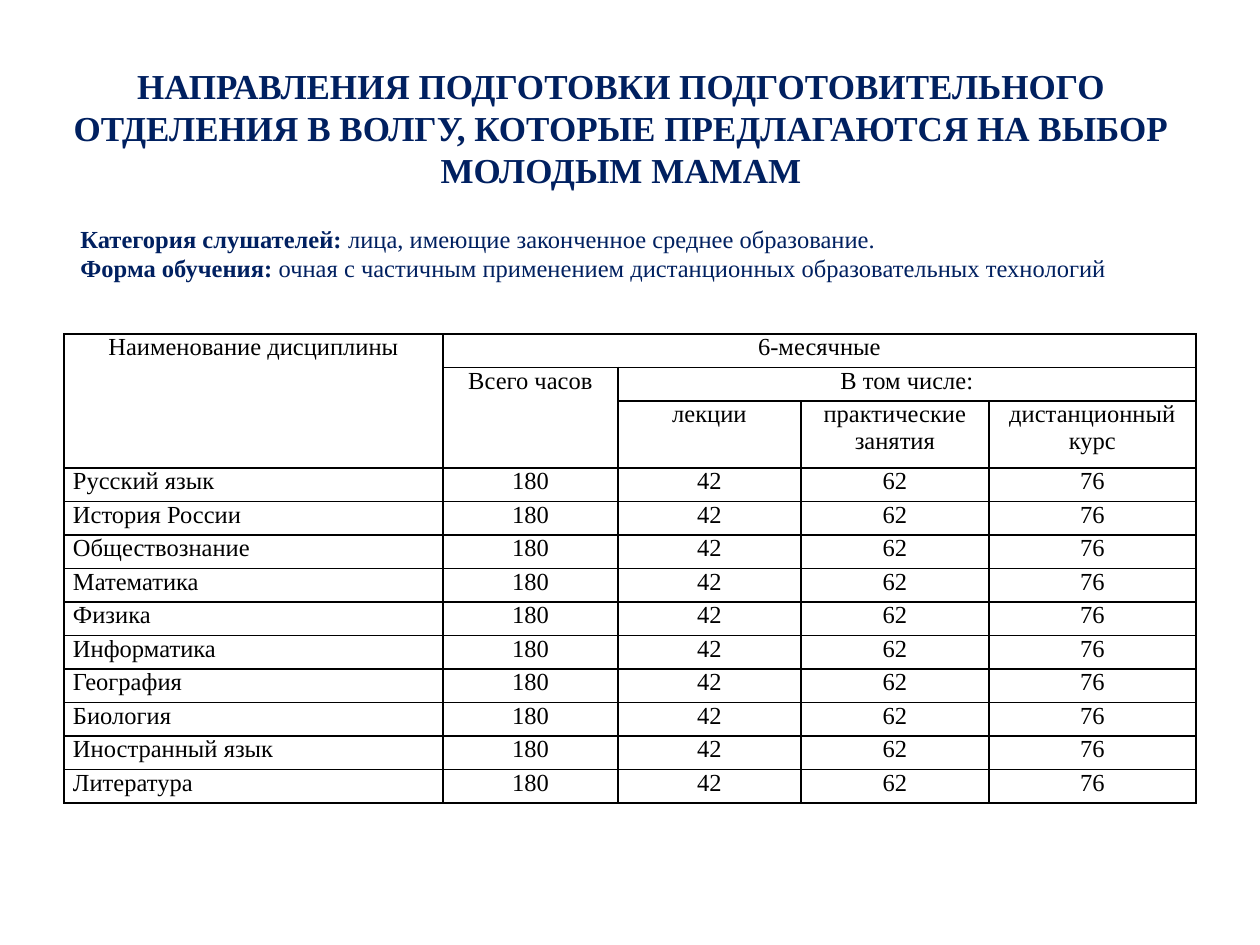
from dataclasses import dataclass
from itertools import accumulate

from lxml.etree import SubElement
from pptx import Presentation
from pptx.dml.color import RGBColor
from pptx.enum.text import MSO_ANCHOR as Anchor, MSO_AUTO_SIZE as AutoSize, PP_ALIGN as Align
from pptx.oxml.ns import qn
from pptx.util import Emu, Pt

EMU_PER_PX = 914400 // 126


def px(length: int) -> Emu:
    return Emu(length * EMU_PER_PX)


@dataclass(frozen=True)
class Theme:
    font: str = "Times New Roman"
    navy: str = "002060"
    black: str = "000000"
    title_size: int = 20
    title_leading: int = 24
    text_size: int = 14
    text_leading: int = 17
    border: int = 1


@dataclass(frozen=True)
class Box:
    left: int
    top: int
    width: int
    height: int


@dataclass(frozen=True)
class Span:
    """A header cell covering one or more rows and columns."""
    row: int
    col: int
    rows: int
    cols: int
    text: str


THEME = Theme()
TITLE_BOX = Box(54, 38, 1134, 179)
TERMS_BOX = Box(68, 217, 1152, 72)
TABLE_BOX = Box(64, 334, 1132, 469)
COLUMN_WIDTHS = (379, 175, 183, 188, 207)

TITLE = ("НАПРАВЛЕНИЯ ПОДГОТОВКИ ПОДГОТОВИТЕЛЬНОГО ОТДЕЛЕНИЯ В ВОЛГУ, "
         "КОТОРЫЕ ПРЕДЛАГАЮТСЯ НА ВЫБОР МОЛОДЫМ МАМАМ")
TERMS = (
    ("Категория слушателей:", " лица, имеющие законченное среднее образование."),
    ("Форма обучения: ",
     "очная с частичным применением дистанционных образовательных технологий"),
)
HEADERS = (
    Span(0, 0, 3, 1, "Наименование дисциплины"),
    Span(0, 1, 1, 4, "6-месячные"),
    Span(1, 1, 2, 1, "Всего часов"),
    Span(1, 2, 1, 3, "В том числе:"),
    Span(2, 2, 1, 1, "лекции"),
    Span(2, 3, 1, 1, "практические\nзанятия"),
    Span(2, 4, 1, 1, "дистанционный курс"),
)
SUBJECTS = ("Русский язык", "История России", "Обществознание", "Математика", "Физика",
            "Информатика", "География", "Биология", "Иностранный язык", "Литература")
HOURS = ("180", "42", "62", "76")
ROW_LINES = (1, 1, 2) + (1,) * len(SUBJECTS)
HEADER_ROWS = len(ROW_LINES) - len(SUBJECTS)


def style(paragraph, size: int, color: str, bold: bool | None = None) -> None:
    font = paragraph.font
    font.name, font.size, font.bold = THEME.font, Pt(size), bold
    font.color.rgb = RGBColor.from_string(color)


def add_text_frame(slide, box: Box):
    frame = slide.shapes.add_textbox(
        px(box.left), px(box.top), px(box.width), px(box.height)).text_frame
    frame.word_wrap = True
    frame.vertical_anchor = Anchor.MIDDLE
    return frame


def add_title(slide) -> None:
    heading = add_text_frame(slide, TITLE_BOX).paragraphs[0]
    heading.text = TITLE
    heading.alignment = Align.CENTER
    heading.line_spacing = Pt(THEME.title_leading)
    style(heading, THEME.title_size, THEME.navy, bold=True)


def add_terms(slide) -> None:
    frame = add_text_frame(slide, TERMS_BOX)
    frame.auto_size = AutoSize.SHAPE_TO_FIT_TEXT
    for index, (label, detail) in enumerate(TERMS):
        term = frame.add_paragraph() if index else frame.paragraphs[0]
        for text, bold in ((label, True), (detail, False)):
            run = term.add_run()
            run.text, run.font.bold = text, bold
        term.line_spacing = Pt(THEME.text_leading)
        style(term, THEME.text_size, THEME.navy)


def clear_cell(cell) -> None:
    """Give a cell plain borders, no fill and narrow margins."""
    cell.margin_left = cell.margin_right = px(9)
    cell.margin_top = cell.margin_bottom = 0
    properties = cell._tc.get_or_add_tcPr()
    for side in ("a:lnL", "a:lnR", "a:lnT", "a:lnB"):
        line = SubElement(properties, qn(side), w=str(Pt(THEME.border)))
        SubElement(SubElement(line, qn("a:solidFill")), qn("a:srgbClr"), val=THEME.black)
    cell.fill.background()


def fill_cell(cell, text: str, align: Align = Align.CENTER) -> None:
    cell.text = text
    for paragraph in cell.text_frame.paragraphs:
        paragraph.alignment = align
        style(paragraph, THEME.text_size, THEME.black, bold=False)


def add_hours_table(slide) -> None:
    box = TABLE_BOX
    table = slide.shapes.add_table(
        len(ROW_LINES), len(COLUMN_WIDTHS),
        px(box.left), px(box.top), px(box.width), px(box.height)).table
    table.first_row = table.horz_banding = False
    for column, width in zip(table.columns, COLUMN_WIDTHS):
        column.width = px(width)
    edges = [px(box.height) * lines // sum(ROW_LINES)
             for lines in accumulate(ROW_LINES, initial=0)]
    for row, top, bottom in zip(table.rows, edges, edges[1:]):
        row.height = Emu(bottom - top)
    for cell in table.iter_cells():
        clear_cell(cell)

    for head in HEADERS:
        cell = table.cell(head.row, head.col)
        if head.rows * head.cols > 1:
            cell.merge(table.cell(head.row + head.rows - 1, head.col + head.cols - 1))
        fill_cell(cell, head.text)
    for row, subject in enumerate(SUBJECTS, HEADER_ROWS):
        fill_cell(table.cell(row, 0), subject, Align.JUSTIFY)
        for col, hours in enumerate(HOURS, 1):
            fill_cell(table.cell(row, col), hours)


def main() -> None:
    deck = Presentation()
    deck.slide_width, deck.slide_height = px(1260), px(945)
    slide = deck.slides.add_slide(deck.slide_layouts[6])
    add_title(slide)
    add_hours_table(slide)
    add_terms(slide)
    deck.save("out.pptx")


if __name__ == "__main__":
    main()
